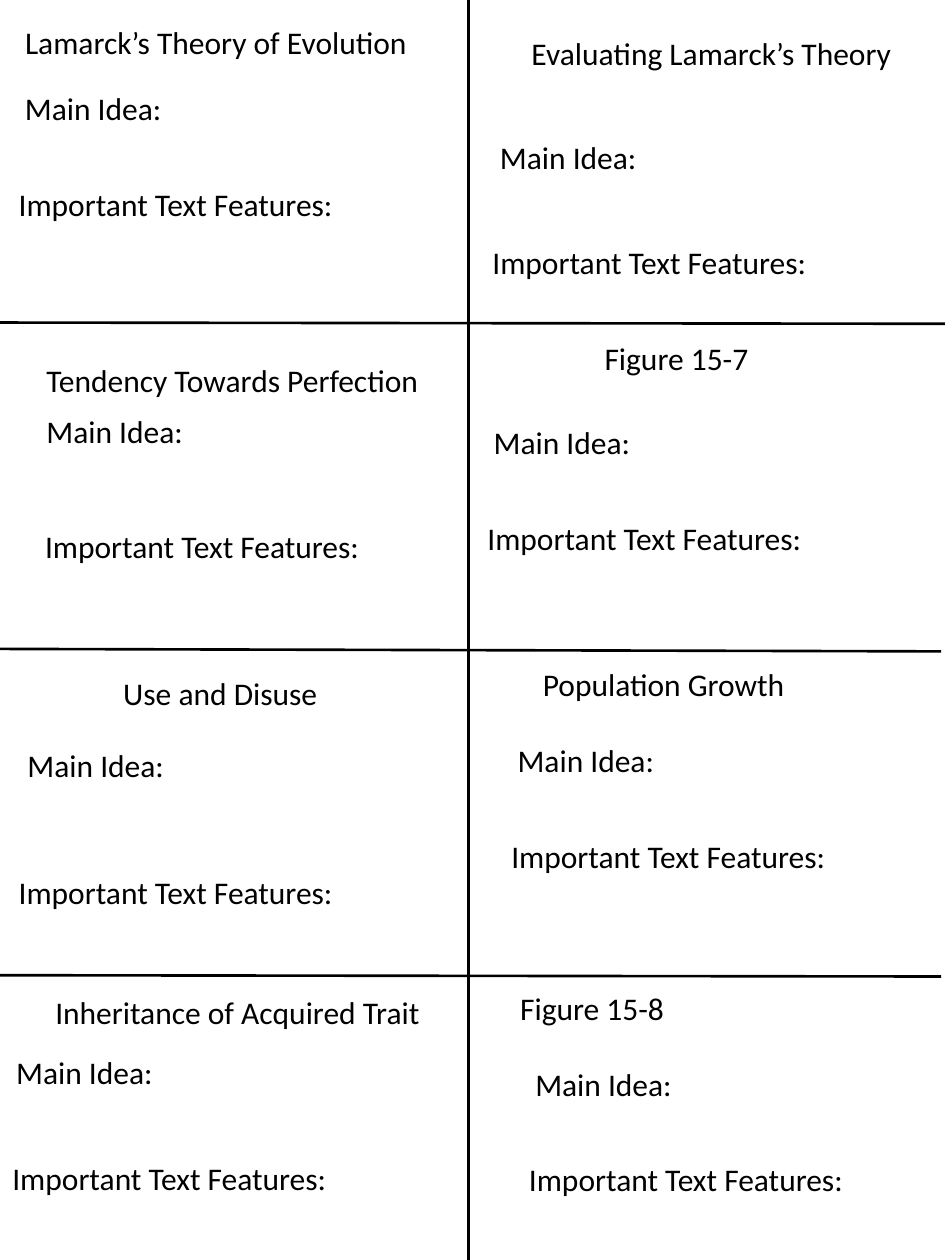
import pptx
import pptx.dml.color
import pptx.enum.shapes
import pptx.enum.text
import pptx.oxml
import pptx.util
from pptx.util import Inches

BLACK = pptx.dml.color.RGBColor(0x00, 0x00, 0x00)
FONT = "Calibri"
PAGE_WIDTH, PAGE_HEIGHT = 7.5, 10
COLUMN_LEFTS = (0, 3.72)
ROW_TOPS = (0, 2.56, 5.15, 7.74)
LABEL_WIDTH, TEXT_HEIGHT = 2.8, 0.4

# Row by row: topic, topic width, then the offsets in the cell of
# the topic, the main idea and the text features.
TOPICS = (
    ("Lamarck’s Theory of Evolution", 3.52, (0.1, 0.13), (0.1, 0.66), (0.05, 1.42)),
    ("Evaluating Lamarck’s Theory", 3.47, (0.4, 0.22), (0.15, 1.05), (0.09, 1.88)),
    ("Tendency Towards Perfection", 3.46, (0.27, 0.26), (0.27, 0.66), (0.26, 1.57)),
    ("Figure 15-7", 3.47, (0.98, 0.08), (0.1, 0.75), (0.05, 1.51)),
    ("Use and Disuse", 2.8, (0.88, 0.15), (0.12, 0.72), (0.05, 1.73)),
    ("Population Growth", 3.47, (0.49, 0.08), (0.29, 0.68), (0.24, 1.44)),
    ("Inheritance of Acquired Trait", 3.61, (0.34, 0.09), (0.03, 0.57), (0, 1.41)),
    ("Figure 15-8", 3.47, (0.31, 0.06), (0.43, 0.66), (0.38, 1.42)),
)


def add_rule(page, start, end):
    rule = page.shapes.add_connector(
        pptx.enum.shapes.MSO_CONNECTOR.STRAIGHT,
        *(Inches(value) for value in start + end))
    rule.line.color.rgb = BLACK
    rule.line.width = pptx.util.Pt(1.5)
    properties = rule.element.spPr
    properties.append(properties.makeelement(pptx.oxml.ns.qn("a:effectLst"), {}))


def add_grid(page):
    add_rule(page, (0, 2.56), (PAGE_WIDTH, 2.57))
    add_rule(page, (COLUMN_LEFTS[1], 0), (COLUMN_LEFTS[1], PAGE_HEIGHT))
    add_rule(page, (-0.03, 5.15), (7.47, 5.17))
    add_rule(page, (-0.03, 7.74), (7.47, 7.75))


def add_text(page, text, left, top, width):
    box = page.shapes.add_textbox(
        Inches(left), Inches(top), Inches(width), Inches(TEXT_HEIGHT))
    frame = box.text_frame
    frame.word_wrap = True
    frame.auto_size = pptx.enum.text.MSO_AUTO_SIZE.SHAPE_TO_FIT_TEXT
    frame.text = text
    font = frame.paragraphs[0].runs[0].font
    font.name = FONT
    font.size = pptx.util.Pt(18)
    font.color.rgb = BLACK


def add_topic_cell(page, left, top, topic, topic_width, *offsets):
    labels = (
        (topic, topic_width),
        ("Main Idea:", LABEL_WIDTH),
        ("Important Text Features:", LABEL_WIDTH),
    )
    for (text, width), (across, down) in zip(labels, offsets):
        add_text(page, text, left + across, top + down, width)


def main():
    deck = pptx.Presentation()
    deck.slide_width = Inches(PAGE_WIDTH)
    deck.slide_height = Inches(PAGE_HEIGHT)
    page = deck.slides.add_slide(deck.slide_layouts[6])
    add_grid(page)
    for index, topic in enumerate(TOPICS):
        row, column = divmod(index, len(COLUMN_LEFTS))
        add_topic_cell(page, COLUMN_LEFTS[column], ROW_TOPS[row], *topic)
    deck.save("out.pptx")


if __name__ == "__main__":
    main()
